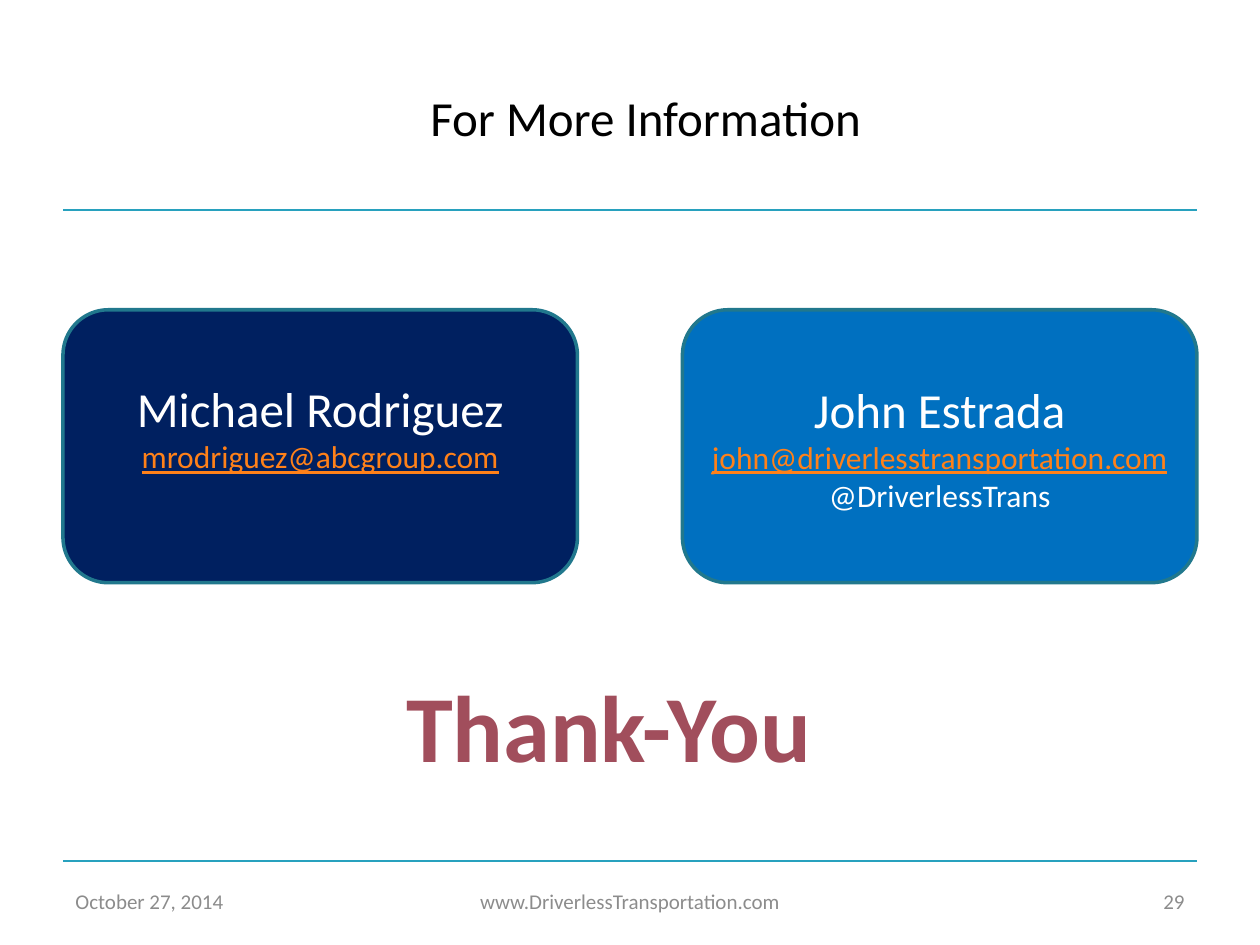
import pptx
import pptx.dml.color
import pptx.enum.shapes
import pptx.enum.text
import pptx.oxml
import pptx.oxml.ns
import pptx.util

Pt = pptx.util.Pt
RGBColor = pptx.dml.color.RGBColor
ALIGN = pptx.enum.text.PP_ALIGN
ANCHOR = pptx.enum.text.MSO_ANCHOR

BLACK = RGBColor(0x00, 0x00, 0x00)
WHITE = RGBColor(0xFF, 0xFF, 0xFF)
GRAY = RGBColor(0x8C, 0x8C, 0x8C)
RULE_TEAL = RGBColor(0x28, 0xA1, 0xBE)
BORDER_TEAL = RGBColor(0x21, 0x78, 0x8D)
NAVY = RGBColor(0x00, 0x20, 0x60)
BLUE = RGBColor(0x00, 0x70, 0xC0)
ORANGE = RGBColor(0xFF, 0x81, 0x19)
MAROON = RGBColor(0xA1, 0x4E, 0x5C)

MARGIN = 36
PAGE_WIDTH = 720
FOOTER_TOP, FOOTER_HEIGHT = 500.4, 28.8
CARD_TOP, CARD_WIDTH, CARD_HEIGHT = 177, 294, 156
CARD_LINE_HEIGHT = 22


def write(para, text, size, color, align=ALIGN.CENTER, bold=False, underline=False):
    para.alignment = align
    span = para.add_run()
    span.text = text
    span.font.name = "Calibri"
    span.font.size = Pt(size)
    span.font.color.rgb = color
    span.font.bold = bold
    span.font.underline = underline


def add_text(page, text, left, top, width, height, anchor=ANCHOR.MIDDLE, wrap=True, **style):
    box = page.shapes.add_textbox(Pt(left), Pt(top), Pt(width), Pt(height))
    box.text_frame.word_wrap = wrap
    box.text_frame.vertical_anchor = anchor
    write(box.text_frame.paragraphs[0], text, **style)


deck = pptx.Presentation()
deck.slide_width = Pt(PAGE_WIDTH)
deck.slide_height = Pt(540)
page = deck.slides.add_slide(deck.slide_layouts[6])

# Rules above the footer and below the title
for rule_top in (492, 120):
    rule = page.shapes.add_connector(
        pptx.enum.shapes.MSO_CONNECTOR.STRAIGHT,
        Pt(MARGIN), Pt(rule_top), Pt(PAGE_WIDTH - MARGIN), Pt(rule_top))
    rule.line.color.rgb = RULE_TEAL
    rule.line.width = Pt(1.5)
    properties = rule._element.spPr
    properties.append(pptx.oxml.parse_xml(
        "<a:effectLst %s/>" % pptx.oxml.ns.nsdecls("a")))

add_text(page, "For More Information", 156, 21.6, 426, 90, size=28, color=BLACK)

# Footer
for text, left, width, align in (
    ("October 27, 2014", MARGIN, 168, ALIGN.LEFT),
    ("www.DriverlessTransportation.com", 246, 228, ALIGN.CENTER),
    ("29", PAGE_WIDTH - MARGIN - 168, 168, ALIGN.RIGHT),
):
    add_text(page, text, left, FOOTER_TOP, width, FOOTER_HEIGHT,
             size=12, color=GRAY, align=align)

# Contact cards: name, address and an optional handle
for left, fill, name, address, handle in (
    (MARGIN, NAVY, "Michael Rodriguez", "mrodriguez@abcgroup.com", None),
    (PAGE_WIDTH - MARGIN - CARD_WIDTH, BLUE, "John Estrada",
     "john@driverlesstransportation.com", "@DriverlessTrans"),
):
    card = page.shapes.add_shape(
        pptx.enum.shapes.MSO_SHAPE.ROUNDED_RECTANGLE,
        Pt(left), Pt(CARD_TOP), Pt(CARD_WIDTH), Pt(CARD_HEIGHT))
    card.shadow.inherit = False
    card.fill.solid()
    card.fill.fore_color.rgb = fill
    card.line.color.rgb = BORDER_TEAL
    card.line.width = Pt(2)
    frame = card.text_frame
    frame.word_wrap = True
    frame.vertical_anchor = ANCHOR.MIDDLE
    write(frame.paragraphs[0], name, size=28, color=WHITE)
    write(frame.add_paragraph(), address, size=18, color=ORANGE, underline=True)
    if handle:
        write(frame.add_paragraph(), handle, size=18, color=WHITE)
    else:
        # Keeps the names of both cards on the same height
        frame.margin_bottom = Pt(3.6 + CARD_LINE_HEIGHT)

add_text(page, "Thank-You", 221.76, 378, 252, 72.72, anchor=ANCHOR.TOP, wrap=False,
         size=54, color=MAROON, bold=True)

deck.save("out.pptx")
